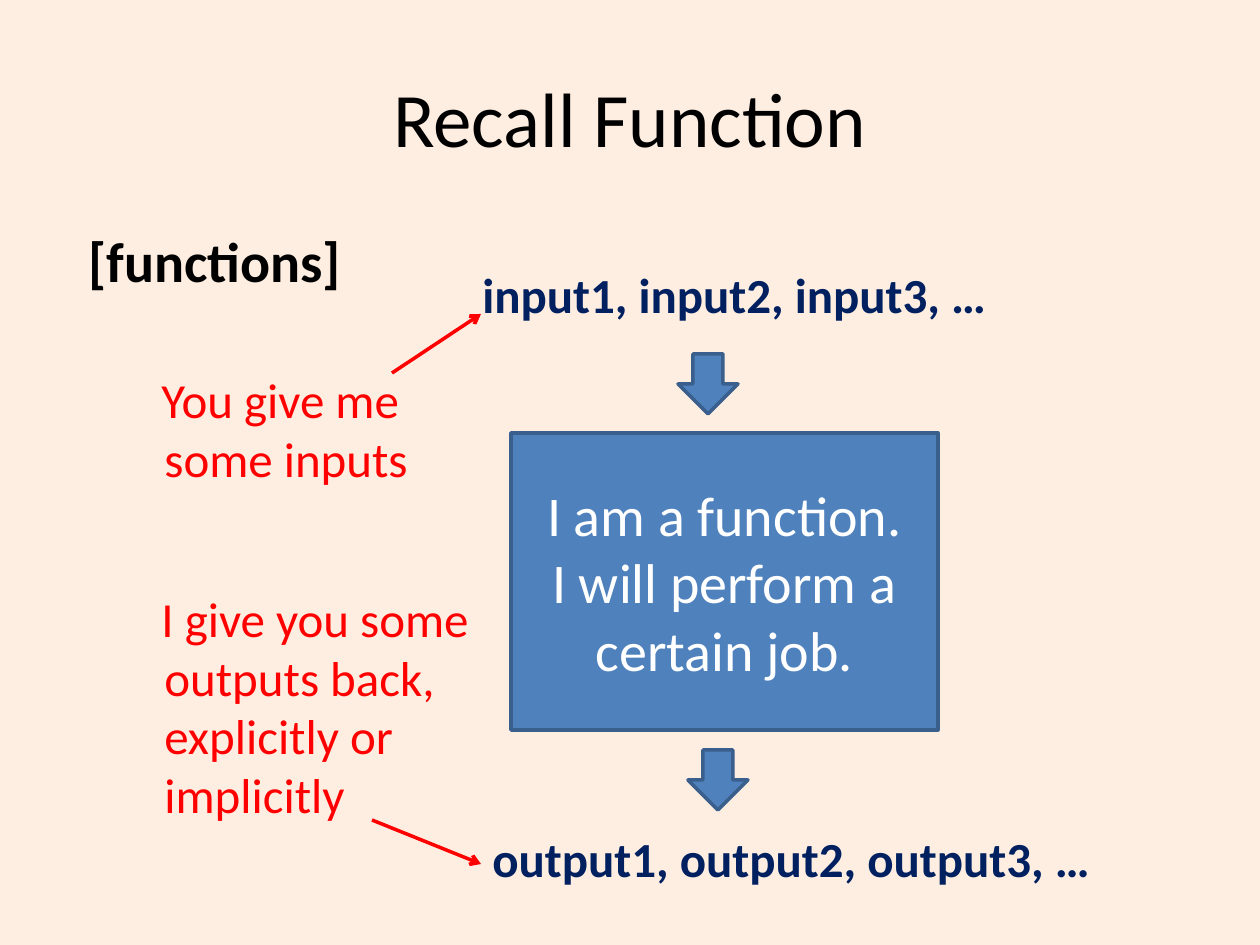
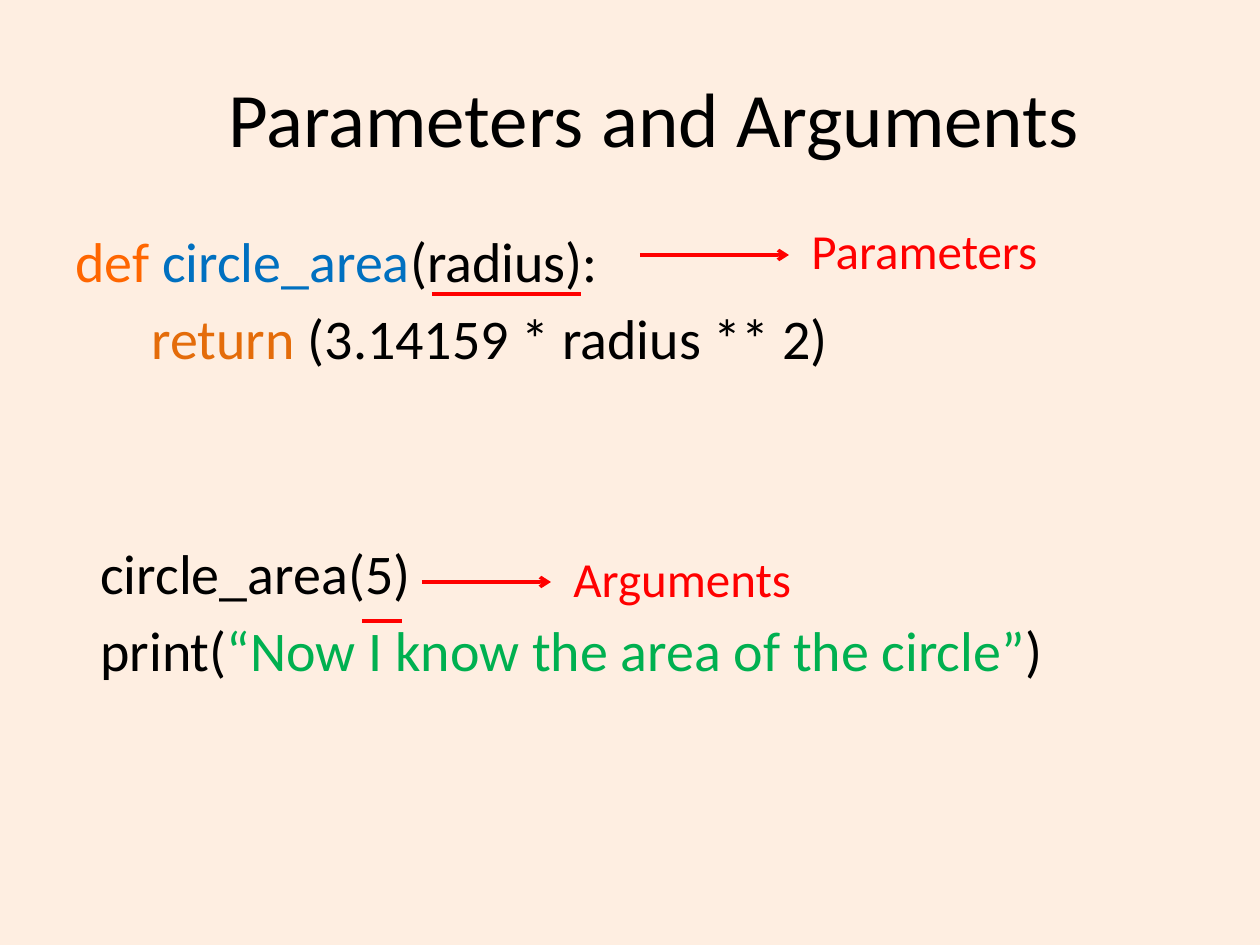
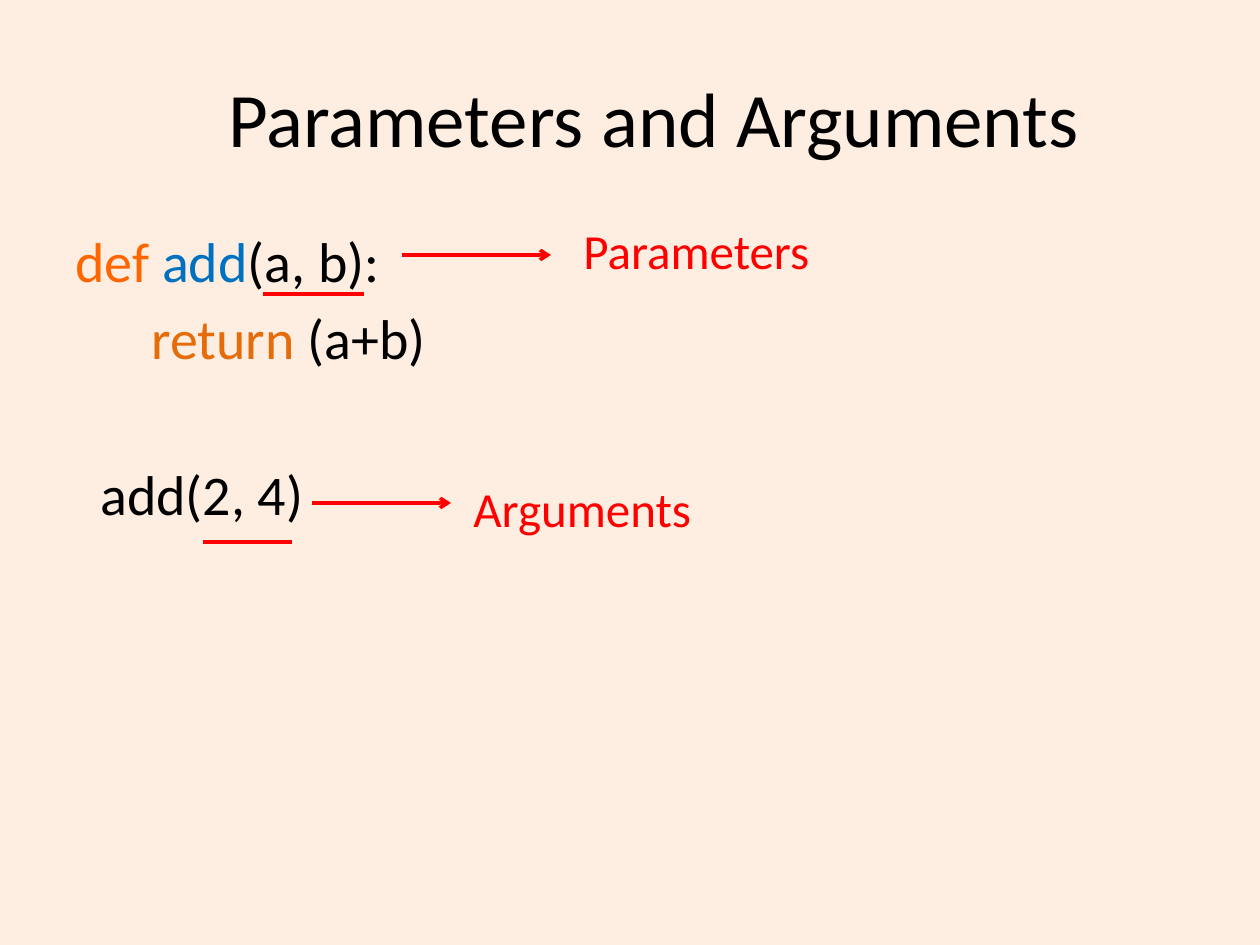
from lxml.etree import SubElement
from pptx import Presentation
from pptx.dml.color import RGBColor
from pptx.enum.shapes import MSO_CONNECTOR, MSO_SHAPE
from pptx.enum.text import MSO_ANCHOR, PP_ALIGN
from pptx.oxml.ns import qn
from pptx.util import Pt

PIXEL = 914400 / 126
FONT = "Calibri"
COLORS = {
    "background": "FEEEE1",
    "text": "000000",
    "white": "FFFFFF",
    "block": "4F81BD",
    "block_line": "3A5F8C",
    "label": "002060",
    "note": "FF0000",
    "def": "FF6600",
    "name": "0070C0",
    "return": "E46C0A",
    "string": "00B050",
}
TITLE_TOP, TITLE_HEIGHT = 38, 158
BODY_BOX = (63, 220, 1134, 659)
CODE_SIZE, NOTE_SIZE = 32, 28
BLANK_LINE = 45
CALL_INDENT, RETURN_INDENT = 25, 76


def px(length):
    """Turn a length in px into EMU."""
    return round(length * PIXEL)


def color(name):
    """Return the named palette colour."""
    return RGBColor.from_string(COLORS[name])


def format_paragraph(paragraph, size, color_name, bold=False):
    """Set the font of every run in a paragraph."""
    for run in paragraph.runs:
        run.font.name = FONT
        run.font.size = Pt(size)
        run.font.bold = bold
        run.font.color.rgb = color(color_name)


def indent(paragraph, margin, first_line=0):
    """Set the left margin and first line offset of a paragraph."""
    properties = paragraph._p.get_or_add_pPr()
    properties.set("marL", str(px(margin)))
    properties.set("indent", str(px(first_line)))


def add_frame(slide, box):
    """Add a wrapping text box and return its text frame."""
    text_frame = slide.shapes.add_textbox(*map(px, box)).text_frame
    text_frame.word_wrap = True
    return text_frame


def add_text(slide, box, text, size, color_name, bold=False, space=5.1):
    """Add a one-paragraph text box and return the paragraph."""
    text_frame = add_frame(slide, box)
    text_frame.text = text
    paragraph = text_frame.paragraphs[0]
    paragraph.space_before = Pt(space)
    format_paragraph(paragraph, size, color_name, bold)
    return paragraph


def add_title(slide, text, width):
    """Add the centred slide title."""
    text_frame = add_frame(slide, (63, TITLE_TOP, width, TITLE_HEIGHT))
    text_frame.vertical_anchor = MSO_ANCHOR.MIDDLE
    text_frame.text = text
    paragraph = text_frame.paragraphs[0]
    paragraph.alignment = PP_ALIGN.CENTER
    format_paragraph(paragraph, 44, "text")


def add_line(slide, start, end, arrow=False):
    """Draw a red line, with an arrowhead at its end if wanted."""
    connector = slide.shapes.add_connector(
        MSO_CONNECTOR.STRAIGHT, *map(px, (*start, *end)))
    connector.line.color.rgb = color("note")
    connector.line.width = Pt(2)
    properties = connector._element.spPr
    if arrow:
        SubElement(properties.find(qn("a:ln")), qn("a:tailEnd"), type="arrow")
    SubElement(properties, qn("a:effectLst"))


def add_block(slide, kind, box):
    """Add a blue shape with a darker outline."""
    shape = slide.shapes.add_shape(kind, *map(px, box))
    shape.shadow.inherit = False
    shape.fill.solid()
    shape.fill.fore_color.rgb = color("block")
    shape.line.color.rgb = color("block_line")
    shape.line.width = Pt(2)
    return shape


def add_function_diagram(slide, box):
    """Draw the function block between its inputs and outputs."""
    left, top, width, height = box
    block = add_block(slide, MSO_SHAPE.RECTANGLE, box)
    text_frame = block.text_frame
    text_frame.word_wrap = True
    text_frame.vertical_anchor = MSO_ANCHOR.MIDDLE
    text_frame.text = "I am a function.\nI will perform a certain job."
    for paragraph in text_frame.paragraphs:
        paragraph.alignment = PP_ALIGN.CENTER
        format_paragraph(paragraph, CODE_SIZE, "white")

    bottom = top + height
    flows = (
        ("input1, input2, input3, …", (left - 41, top - 168, 556, 69),
         (left + 167, top - 79)),
        ("output1, output2, output3, …", (left - 31, bottom + 99, 779, 69),
         (left + 177, bottom + 20)),
    )
    for text, label_box, arrow_position in flows:
        label = add_text(slide, label_box, text, NOTE_SIZE, "label", bold=True)
        label.line_spacing = 0.9
        add_block(slide, MSO_SHAPE.DOWN_ARROW, (*arrow_position, 60, 60))


def add_side_note(slide, box, text, start, end):
    """Add a red note and an arrow placed relative to the note."""
    left, top = box[:2]
    paragraph = add_text(slide, box, text, NOTE_SIZE, "note")
    indent(paragraph, 47, -3)
    add_line(slide, (left + start[0], top + start[1]),
             (left + end[0], top + end[1]), arrow=True)


def add_code(slide, box, lines):
    """Write coloured code lines of (margin, blank lines above, runs)."""
    text_frame = add_frame(slide, box)
    for number, (margin, blank_lines, pieces) in enumerate(lines):
        paragraph = text_frame.add_paragraph() if number else text_frame.paragraphs[0]
        paragraph.space_before = Pt(5.8 + blank_lines * BLANK_LINE)
        indent(paragraph, margin)
        for text, color_name in pieces:
            run = paragraph.add_run()
            run.text = text
            run.font.name = FONT
            run.font.size = Pt(CODE_SIZE)
            run.font.color.rgb = color(color_name)


def add_annotation(slide, box, text, arrow_y, arrow, underline, label):
    """Underline part of the code and point from it to a red label."""
    left, top = box[:2]
    for (start, end), y, has_head in ((arrow, arrow_y, True),
                                      (underline, arrow_y + 39, False)):
        add_line(slide, (left + start, top + y), (left + end, top + y), has_head)
    add_text(slide, (left + label[0], top + label[1], 268, 89), text,
             NOTE_SIZE, "note")


def add_recall_slide(slide):
    """Build the slide that recalls what a function is."""
    add_title(slide, "Recall Function", 1134)
    heading = add_text(slide, BODY_BOX, "[functions]", CODE_SIZE, "text",
                       bold=True, space=5.8)
    indent(heading, 13)
    add_function_diagram(slide, (511, 433, 427, 297))
    add_side_note(slide, (105, 363, 407, 149), "You give me some inputs",
                  (287, 10), (376, -49))
    add_side_note(slide, (105, 582, 407, 248),
                  "I give you some outputs back, explicitly or implicitly",
                  (267, 238), (376, 282))


def add_code_slide(slide, lines, annotations):
    """Build a slide of annotated code."""
    add_title(slide, "Parameters and Arguments", 1182)
    add_code(slide, BODY_BOX, lines)
    for annotation in annotations:
        add_annotation(slide, BODY_BOX, *annotation)


def function_lines(name, parameters, result):
    """Return the two code lines that define a function."""
    return [
        (0, 0, [("def ", "def"), (name, "name"), (f"({parameters}):", "text")]),
        (RETURN_INDENT, 0, [("return ", "return"), (f"({result})", "text")]),
    ]


def main():
    """Build and save the presentation."""
    presentation = Presentation()
    presentation.slide_width = px(1260)
    presentation.slide_height = px(945)
    background = presentation.slide_master.background.fill
    background.solid()
    background.fore_color.rgb = color("background")
    recall, circle, addition = (
        presentation.slides.add_slide(presentation.slide_layouts[6])
        for _ in range(3))

    add_recall_slide(recall)
    add_code_slide(
        circle,
        function_lines("circle_area", "radius", "3.14159 * radius ** 2") + [
            (CALL_INDENT, 2, [("circle_area(5)", "text")]),
            (CALL_INDENT, 0, [("print(", "text"),
                              ("“Now I know the area of the circle”", "string"),
                              (")", "text")]),
        ],
        [("Parameters", 35, (577, 726), (369, 518), (736, -6)),
         ("Arguments", 362, (359, 488), (299, 339), (498, 322))])
    add_code_slide(
        addition,
        function_lines("add", "a, b", "a+b") + [
            (CALL_INDENT, 1, [("add(2, 4)", "text")]),
        ],
        [("Parameters", 35, (339, 488), (200, 301), (508, -6)),
         ("Arguments", 283, (249, 388), (140, 229), (398, 252))])
    presentation.save("out.pptx")


if __name__ == "__main__":
    main()
